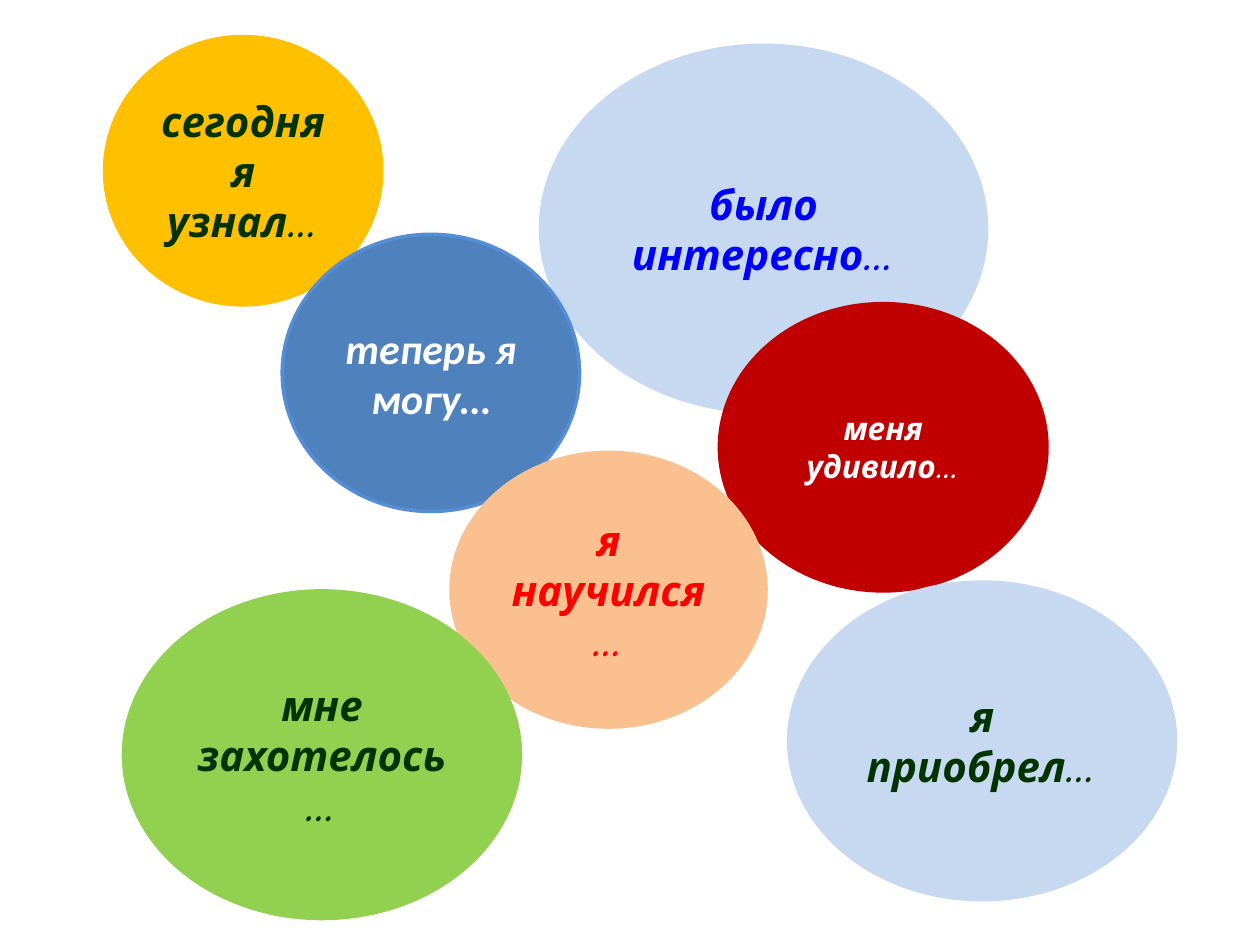
from dataclasses import dataclass

from pptx import Presentation
from pptx.dml.color import RGBColor
from pptx.enum.shapes import MSO_SHAPE
from pptx.enum.text import MSO_ANCHOR, PP_ALIGN
from pptx.util import Inches, Pt


@dataclass(frozen=True)
class Theme:
    gold: str = "FFC000"
    pale: str = "C6D9F1"
    blue: str = "4F81BD"
    edge: str = "558ED5"
    dark_red: str = "C00000"
    peach: str = "FAC090"
    green: str = "92D050"
    forest: str = "003300"
    ink: str = "0000FF"
    red: str = "FF0000"
    white: str = "FFFFFF"
    font: str = "Comic Neue"
    plain: str = "Calibri"
    big: int = 24
    small: int = 18
    line: int = 2


def write(frame, text, *, color, size, font):
    """Put centred bold italic text into a frame."""
    frame.word_wrap = True
    frame.vertical_anchor = MSO_ANCHOR.MIDDLE
    para = frame.paragraphs[0]
    para.alignment = PP_ALIGN.CENTER
    run = para.add_run()
    run.text = text
    run.font.name = font
    run.font.size = Pt(size)
    run.font.bold = run.font.italic = True
    run.font.color.rgb = RGBColor.from_string(color)


class Board:
    def __init__(self, slide, theme):
        self.slide = slide
        self.theme = theme

    def bubble(self, text, box, fill, color, edge=None, size=None, font=None):
        style = self.theme
        shape = self.slide.shapes.add_shape(
            MSO_SHAPE.OVAL, *(Inches(n) for n in box))
        shape.shadow.inherit = False
        shape.fill.solid()
        shape.fill.fore_color.rgb = RGBColor.from_string(fill)
        shape.line.color.rgb = RGBColor.from_string(edge or fill)
        shape.line.width = Pt(style.line)
        write(shape.text_frame, text, color=color,
              size=size or style.big, font=font or style.font)


def main():
    deck = Presentation()
    deck.slide_width, deck.slide_height = Inches(10), Inches(7.5)
    theme = Theme()
    board = Board(deck.slides.add_slide(deck.slide_layouts[6]), theme)

    # Reflection bubbles, from back to front
    board.bubble("сегодня я узнал…", (0.83, 0.29, 2.2, 2.13),
                 theme.gold, theme.forest)
    board.bubble("было интересно…", (4.29, 0.36, 3.54, 2.91),
                 theme.pale, theme.ink)
    board.bubble("теперь я могу…", (2.24, 1.86, 2.36, 2.2),
                 theme.blue, theme.white, edge=theme.edge, font=theme.plain)
    board.bubble("меня удивило…", (5.71, 2.41, 2.6, 2.28),
                 theme.dark_red, theme.white, size=theme.small)
    board.bubble("я научился…", (3.58, 3.59, 2.5, 2.18),
                 theme.peach, theme.red)
    board.bubble("мне захотелось…", (0.98, 4.69, 3.15, 2.6),
                 theme.green, theme.forest)
    board.bubble("я приобрел…", (6.26, 4.62, 3.07, 2.52),
                 theme.pale, theme.forest)

    deck.save("out.pptx")


if __name__ == "__main__":
    main()
